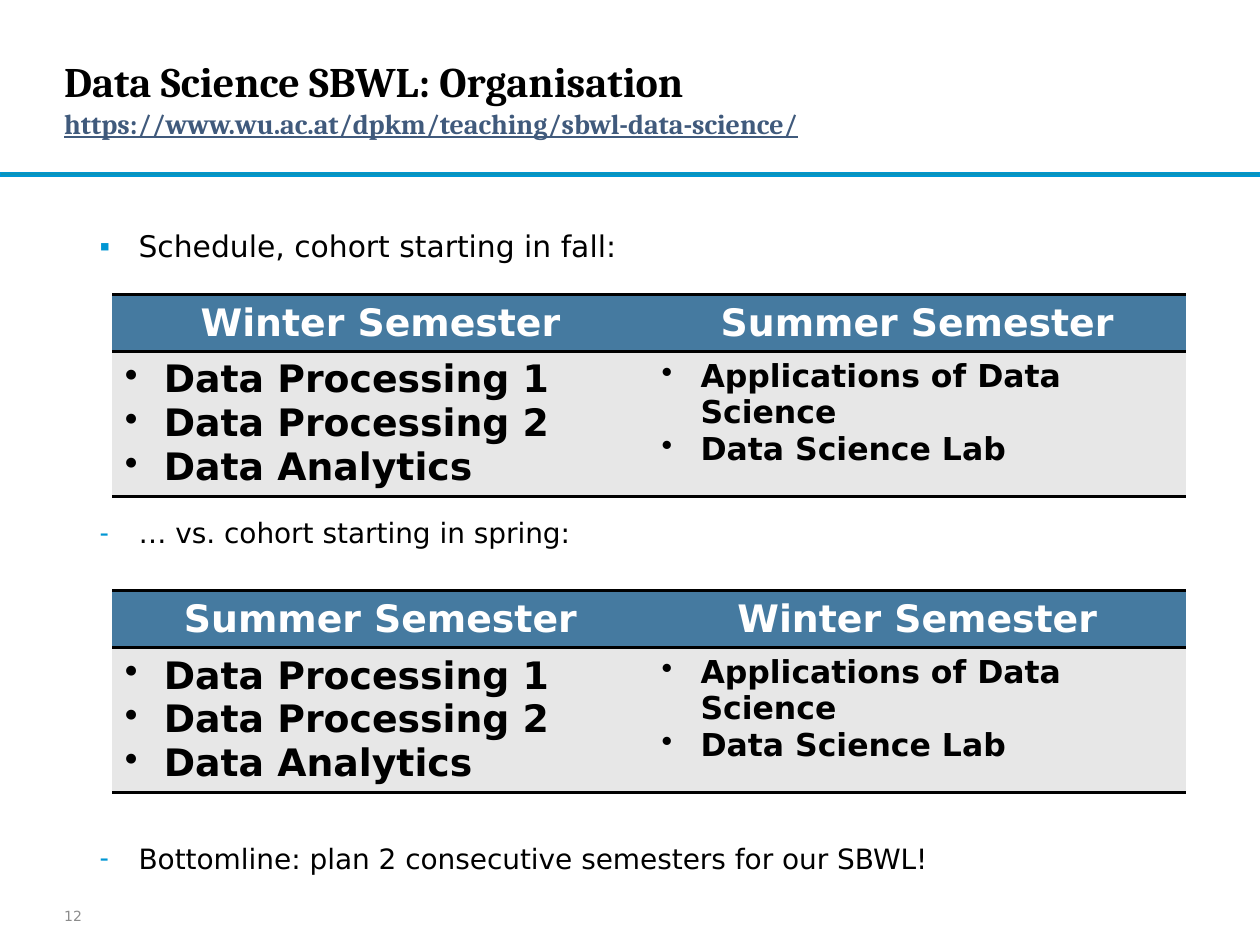
from lxml import etree
from pptx import Presentation
from pptx import util as u
from pptx.dml.color import RGBColor
from pptx.enum import shapes, text
from pptx.oxml.ns import qn

BLACK = RGBColor(0x00, 0x00, 0x00)
WHITE = RGBColor(0xFF, 0xFF, 0xFF)
GREY = RGBColor(0x8C, 0x8C, 0x8C)
LINK = RGBColor(0x40, 0x5A, 0x7C)
BAR = RGBColor(0x0C, 0x94, 0xB7)
ACCENT = RGBColor(0x00, 0x96, 0xD3)
HEADER = RGBColor(0x45, 0x7A, 0xA0)
PANEL = RGBColor(0xE7, 0xE7, 0xE7)
SERIF, SANS = "Cambria", "DejaVu Sans"
NO_STYLE = "{2D5ABB26-0587-4C30-8999-92F81FD0307C}"

# Content
TITLE = "Data Science SBWL: Organisation"
ADDRESS = "https://www.wu.ac.at/dpkm/teaching/sbwl-data-science/"
POINTS = [  # bullet, wording, size, space before (room for the tables)
    ("▪", "Schedule, cohort starting in fall:", 17, 0),
    ("-", "… vs. cohort starting in spring:", 16, 140),
    ("-", "Bottomline: plan 2 consecutive semesters for our SBWL!", 16, 163),
]
FIRST_COURSES = ["Data Processing 1", "Data Processing 2", "Data Analytics"]
SECOND_COURSES = ["Applications of Data Science", "Data Science Lab"]
SCHEDULES = [  # top, semesters
    (4.69, ("Summer Semester", "Winter Semester")),
    (2.34, ("Winter Semester", "Summer Semester")),
]
PAGE = "12"

# Layout in inches
LEFT = 0.51
TABLE_LEFT, COLUMN = 0.89, 4.26
ROWS = (0.45, 1.15)


def write(paragraph, wording, size=16, color=BLACK, font=SANS, bold=False,
          underline=False, align=text.PP_ALIGN.LEFT, before=0, after=0):
    paragraph.alignment = align
    paragraph.space_before, paragraph.space_after = u.Pt(before), u.Pt(after)
    run = paragraph.add_run()
    run.text = wording
    run.font.size, run.font.name = u.Pt(size), font
    run.font.bold, run.font.underline = bold, underline
    run.font.color.rgb = color


def add_bullet(paragraph, char, indent, hang, color=None):
    props = paragraph._p.get_or_add_pPr()
    props.set("marL", str(u.Inches(indent)))
    props.set("indent", str(-u.Inches(hang)))
    if color is not None:
        fill = etree.SubElement(props, qn("a:buClr"))
        etree.SubElement(fill, qn("a:srgbClr"), val=str(color))
    etree.SubElement(props, qn("a:buChar"), char=char)


def paragraphs(frame, items):
    for i, item in enumerate(items):
        yield (frame.add_paragraph() if i else frame.paragraphs[0]), item


def place(shape, left, top, width, height):
    shape.left, shape.top = u.Inches(left), u.Inches(top)
    shape.width, shape.height = u.Inches(width), u.Inches(height)


def set_frame(frame, anchor, inset):
    frame.word_wrap = True
    frame.auto_size = text.MSO_AUTO_SIZE.NONE
    frame.vertical_anchor = anchor
    frame.margin_left = frame.margin_right = 0
    frame.margin_top = frame.margin_bottom = u.Inches(inset)


def style_cell(cell, color):
    cell.fill.solid()
    cell.fill.fore_color.rgb = color
    props = cell._tc.get_or_add_tcPr()
    for i, side in enumerate(("a:lnT", "a:lnB")):
        border = etree.Element(qn(side), w=str(u.Pt(2)))
        fill = etree.SubElement(border, qn("a:solidFill"))
        etree.SubElement(fill, qn("a:srgbClr"), val=str(BLACK))
        props.insert(i, border)


def add_schedule(slide, top, semesters):
    frame = slide.shapes.add_table(
        2, 2, u.Inches(TABLE_LEFT), u.Inches(top),
        u.Inches(2 * COLUMN), u.Inches(sum(ROWS)))
    table = frame.table
    table._tbl.tblPr.find(qn("a:tableStyleId")).text = NO_STYLE
    for row, height in zip(table.rows, ROWS):
        row.height = u.Inches(height)
    columns = zip(semesters, (FIRST_COURSES, SECOND_COURSES), (21.6, 18))
    for col, (semester, courses, size) in enumerate(columns):
        table.columns[col].width = u.Inches(COLUMN)
        head, body = table.cell(0, col), table.cell(1, col)
        style_cell(head, HEADER)
        style_cell(body, PANEL)
        write(head.text_frame.paragraphs[0], semester, size=21.6, color=WHITE,
              bold=True, align=text.PP_ALIGN.CENTER)
        for paragraph, course in paragraphs(body.text_frame, courses):
            add_bullet(paragraph, "•", 0.31, 0.31)
            write(paragraph, course, size=size, bold=True)


def main():
    deck = Presentation()
    deck.slide_width, deck.slide_height = u.Inches(10), u.Inches(7.5)
    slide = deck.slides.add_slide(deck.slide_layouts[1])
    title, points = slide.placeholders[0], slide.placeholders[1]

    # Rule under the heading
    rule = slide.shapes.add_shape(shapes.MSO_SHAPE.RECTANGLE, 0, 0, 0, 0)
    place(rule, 0, 1.37, 10, 0.03)
    rule.shadow.inherit = False
    rule.fill.solid()
    rule.fill.fore_color.rgb = BAR
    rule.line.color.rgb = ACCENT
    rule.line.width = u.Pt(1)

    # Heading with web address
    place(title, LEFT, 0.18, 7.27, 1.19)
    set_frame(title.text_frame, text.MSO_ANCHOR.MIDDLE, 0)
    heading = title.text_frame.paragraphs[0]
    write(heading, TITLE, size=24, font=SERIF, bold=True)
    heading.add_line_break()
    write(heading, ADDRESS, size=16, color=LINK, font=SERIF, bold=True,
          underline=True)

    # Points around the tables
    place(points, LEFT, 1.76, 8.49, 5.34)
    set_frame(points.text_frame, text.MSO_ANCHOR.TOP, 0.05)
    for paragraph, point in paragraphs(points.text_frame, POINTS):
        char, wording, size, before = point
        paragraph.level = 1
        add_bullet(paragraph, char, 0.59, 0.31, ACCENT)
        write(paragraph, wording, size=size, before=before, after=4)

    # Semester tables
    for top, semesters in SCHEDULES:
        add_schedule(slide, top, semesters)

    # Page number
    number = slide.shapes.add_textbox(0, 0, 0, 0)
    place(number, LEFT, 7.1, 0.98, 0.34)
    set_frame(number.text_frame, text.MSO_ANCHOR.MIDDLE, 0.05)
    write(number.text_frame.paragraphs[0], PAGE, size=8, color=GREY)

    deck.save("out.pptx")


if __name__ == "__main__":
    main()
